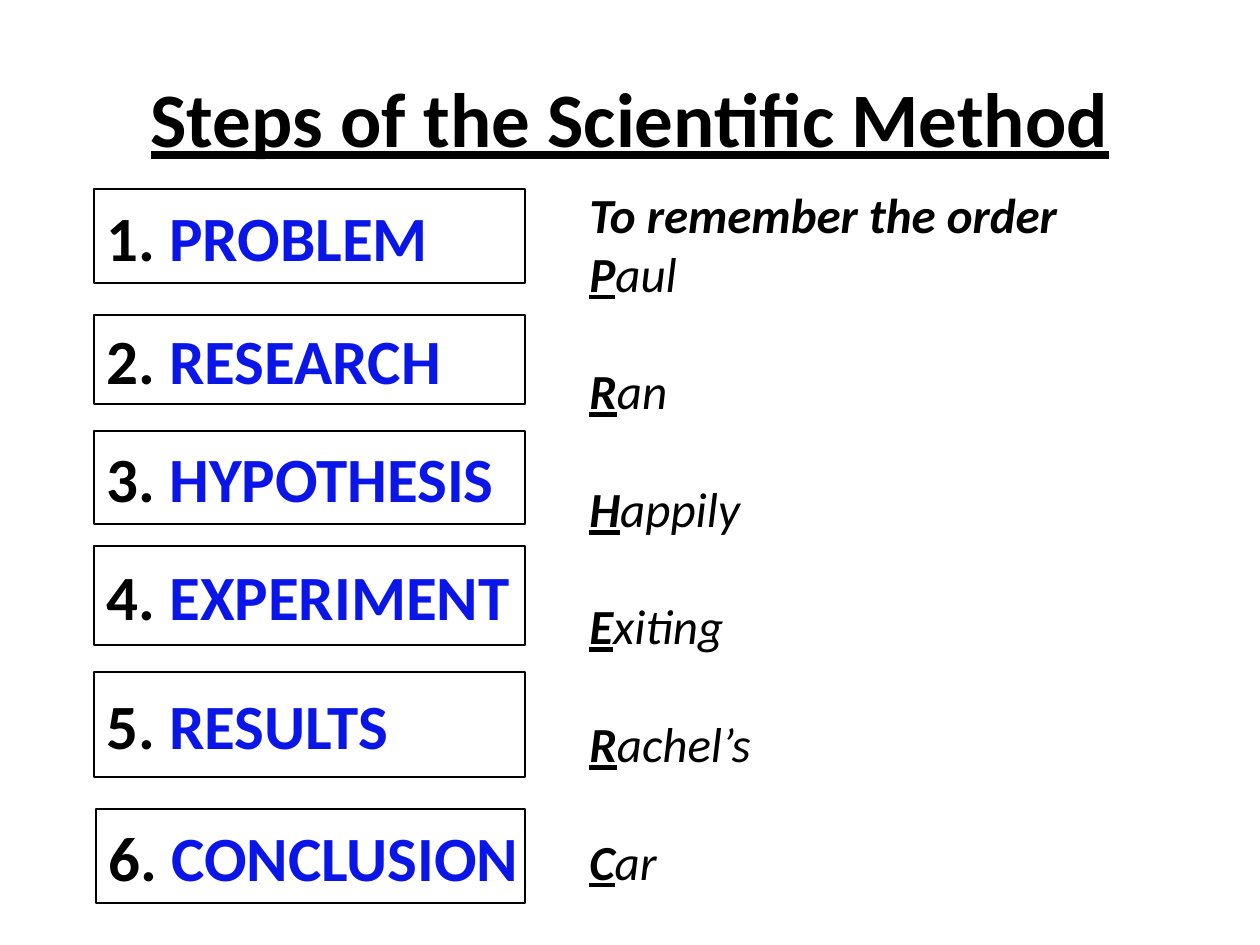
"""Build the slide on the steps of the scientific method."""
from dataclasses import dataclass

from pptx import Presentation
from pptx.dml.color import RGBColor
from pptx.enum.shapes import MSO_SHAPE
from pptx.enum.text import MSO_ANCHOR, MSO_AUTO_SIZE, PP_ALIGN
from pptx.slide import Slide
from pptx.util import Emu, Pt

BLACK = RGBColor(0x00, 0x00, 0x00)
BLUE = RGBColor(0x0A, 0x15, 0xE8)
WHITE = RGBColor(0xFF, 0xFF, 0xFF)
FONT = "Calibri"


@dataclass(frozen=True)
class Step:
    """A step, its box in px and the word that recalls it."""
    name: str
    word: str
    left: int
    top: int
    width: int
    height: int


STEPS = [
    Step("PROBLEM", "Paul", 94, 189, 431, 94),
    Step("RESEARCH", "Ran", 94, 315, 431, 89),
    Step("HYPOTHESIS", "Happily", 94, 431, 431, 93),
    Step("EXPERIMENT", "Exiting", 94, 546, 431, 99),
    Step("RESULTS", "Rachel’s", 94, 672, 431, 105),
    Step("CONCLUSION", "Car", 96, 809, 429, 94),
]


def px(count: int) -> Emu:
    """Turn px into EMU at 126 px to the inch."""
    return Emu(round(count * 914400 / 126))


def style(run, size: int, color: RGBColor = BLACK, bold: bool = True,
          italic: bool = False, under: bool = False) -> None:
    """Format one run."""
    font = run.font
    font.name, font.size = FONT, Pt(size)
    font.bold, font.italic, font.underline = bold, italic, under
    font.color.rgb = color


def add_title(slide: Slide, text: str) -> None:
    """Place and format the title."""
    title = slide.shapes.title
    title.left, title.top = px(63), px(38)
    title.width, title.height = px(1134), px(157)
    frame = title.text_frame
    frame.text = text
    frame.vertical_anchor = MSO_ANCHOR.MIDDLE
    para = frame.paragraphs[0]
    para.alignment = PP_ALIGN.CENTER
    style(para.runs[0], 44, under=True)


def add_step(slide: Slide, rank: int, step: Step) -> None:
    """Draw the box of one numbered step."""
    box = slide.shapes.add_shape(MSO_SHAPE.RECTANGLE, px(step.left), px(step.top),
                                 px(step.width), px(step.height))
    box.shadow.inherit = False
    box.fill.solid()
    box.fill.fore_color.rgb = WHITE
    box.line.color.rgb = BLACK
    box.line.width = Pt(0.75)
    frame = box.text_frame
    frame.word_wrap = False
    frame.vertical_anchor = MSO_ANCHOR.MIDDLE
    para = frame.paragraphs[0]
    para.alignment = PP_ALIGN.LEFT
    for text, color in ((f"{rank}. ", BLACK), (step.name, BLUE)):
        run = para.add_run()
        run.text = text
        style(run, 36, color)


def add_verse(slide: Slide, head: str, words: list[str]) -> None:
    """Write the memory aid with each first letter stressed."""
    box = slide.shapes.add_textbox(px(577), px(178), px(567), px(726))
    frame = box.text_frame
    frame.word_wrap = True
    frame.auto_size = MSO_AUTO_SIZE.SHAPE_TO_FIT_TEXT
    frame.text = head
    style(frame.paragraphs[0].runs[0], 28, italic=True)
    for rank, word in enumerate(words):
        para = frame.add_paragraph()
        para.space_before = Pt(33.6 if rank else 0)
        for text, bold in ((word[0], True), (word[1:], False)):
            run = para.add_run()
            run.text = text
            style(run, 28, bold=bold, italic=True, under=bold)


def main() -> None:
    """Build and save the deck."""
    deck = Presentation()
    deck.slide_width, deck.slide_height = px(1260), px(945)
    slide = deck.slides.add_slide(deck.slide_layouts[5])
    add_title(slide, "Steps of the Scientific Method")
    for rank, step in enumerate(STEPS, 1):
        add_step(slide, rank, step)
    add_verse(slide, "To remember the order", [step.word for step in STEPS])
    deck.save("out.pptx")


if __name__ == "__main__":
    main()
